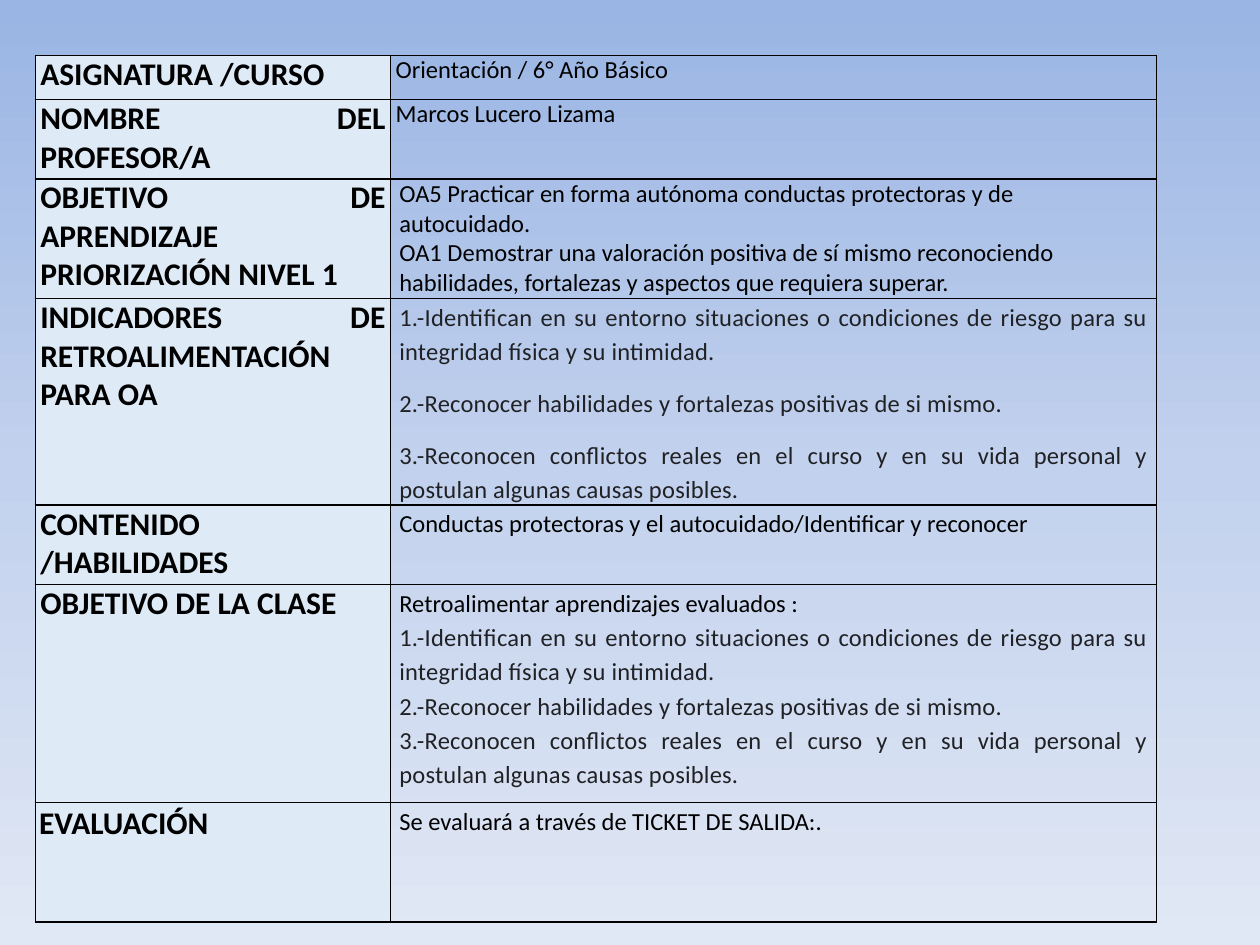
from copy import deepcopy

from pptx import Presentation
from pptx.dml.color import RGBColor
from pptx.enum.text import PP_ALIGN
from pptx.oxml import parse_xml
from pptx.oxml.ns import nsdecls, qn
from pptx.util import Inches, Pt

FONT = "Calibri"
BLACK = "000000"
GRAY = "202124"
LABEL_FILL = "DEEAF6"
BACKGROUND_STOPS = [(0, "9AB5E4"), (0.5, "C2D1ED"), (1, "E1E8F5")]
COLUMN_WIDTHS = [2.82, 6.08]

INDICATORS = [
    "1.-Identifican en su entorno situaciones o condiciones de riesgo para su integridad física y su intimidad.",
    "2.-Reconocer habilidades y fortalezas positivas de si mismo.",
    "3.-Reconocen conflictos reales en el curso y en su vida personal y postulan algunas causas posibles.",
]
SPACED = {"line_spacing": 1.15}
INDICATOR = {"line_spacing": 1.15, "color": GRAY, "tracking": 10}

# Height, label, side margin of the value, and the value's paragraphs with their format
ROWS = [
    (0.35, "ASIGNATURA /CURSO", 0.04, [("Orientación / 6° Año Básico", {})]),
    (0.63, "NOMBRE DEL PROFESOR/A", 0.04, [("Marcos Lucero Lizama", {})]),
    (0.95, "OBJETIVO DE APRENDIZAJE PRIORIZACIÓN NIVEL 1", 0.07, [
        ("OA5 Practicar en forma autónoma conductas protectoras y de autocuidado.",
         {"align": PP_ALIGN.LEFT}),
        ("OA1 Demostrar una valoración positiva de sí mismo reconociendo habilidades, "
         "fortalezas y aspectos que requiera superar.", {"align": PP_ALIGN.LEFT}),
    ]),
    (1.44, "INDICADORES DE RETROALIMENTACIÓN PARA OA", 0.07,
     [(text, {**INDICATOR, "space_after": 10}) for text in INDICATORS]),
    (0.63, "CONTENIDO /HABILIDADES", 0.07,
     [("Conductas protectoras y el autocuidado/Identificar y reconocer", SPACED)]),
    (1.73, "OBJETIVO DE LA CLASE", 0.07,
     [("Retroalimentar aprendizajes evaluados :", SPACED)]
     + [(text, INDICATOR) for text in INDICATORS]),
    (0.95, "EVALUACIÓN", 0.07, [("Se evaluará a través de TICKET DE SALIDA:.", SPACED)]),
]


def rgb(color):
    return RGBColor.from_string(color)


def write(paragraph, text, size=14, bold=False, color=BLACK, align=PP_ALIGN.JUSTIFY,
          line_spacing=None, space_after=0, tracking=0):
    """Tracking is in hundredths of a point."""
    paragraph.alignment = align
    paragraph.line_spacing = line_spacing
    paragraph.space_after = Pt(space_after)
    run = paragraph.add_run()
    run.text = text
    font = run.font
    font.name, font.size, font.bold = FONT, Pt(size), bold
    font.color.rgb = rgb(color)
    if tracking:
        run._r.get_or_add_rPr().set("spc", str(tracking))


def set_borders(cell, color=BLACK, width=1):
    properties = cell._tc.get_or_add_tcPr()
    for index, side in enumerate(["lnL", "lnR", "lnT", "lnB"]):
        properties.insert(index, parse_xml(
            f'<a:{side} {nsdecls("a")} w="{Pt(width)}"><a:solidFill>'
            f'<a:srgbClr val="{color}"/></a:solidFill></a:{side}>'))


def fill_cell(cell, paragraphs, side_margin, end_margin=0, fill=None):
    cell.margin_left = cell.margin_right = Inches(side_margin)
    cell.margin_top = cell.margin_bottom = Inches(end_margin)
    if fill:
        cell.fill.solid()
        cell.fill.fore_color.rgb = rgb(fill)
    else:
        cell.fill.background()
    set_borders(cell)
    frame = cell.text_frame
    for index, (text, style) in enumerate(paragraphs):
        paragraph = frame.add_paragraph() if index else frame.paragraphs[0]
        write(paragraph, text, **style)


def paint_background(slide):
    fill = slide.background.fill
    fill.gradient()
    fill.gradient_angle = 270
    stop_list = next(slide.element.iter(qn("a:gsLst")))
    stop_list.insert(1, deepcopy(stop_list[0]))
    for stop, (position, color) in zip(fill.gradient_stops, BACKGROUND_STOPS):
        stop.position = position
        stop.color.rgb = rgb(color)


def add_lesson_table(slide, left, top, width, height):
    table = slide.shapes.add_table(len(ROWS), len(COLUMN_WIDTHS), Inches(left),
                                   Inches(top), Inches(width), Inches(height)).table
    table.first_row = table.horz_banding = False
    for column, column_width in zip(table.columns, COLUMN_WIDTHS):
        column.width = Inches(column_width)
    for index, (row_height, label, margin, paragraphs) in enumerate(ROWS):
        table.rows[index].height = Inches(row_height)
        is_last = index == len(ROWS) - 1
        label_margins = (0.03, 0.02) if is_last else (0.04, 0)
        fill_cell(table.cell(index, 0), [(label, {"size": 18, "bold": True})],
                  *label_margins, fill=LABEL_FILL)
        fill_cell(table.cell(index, 1), paragraphs, margin)


def main():
    presentation = Presentation()
    presentation.slide_width, presentation.slide_height = Inches(10), Inches(7.5)
    slide = presentation.slides.add_slide(presentation.slide_layouts[6])
    paint_background(slide)
    add_lesson_table(slide, 0.28, 0.44, sum(COLUMN_WIDTHS), sum(row[0] for row in ROWS))
    presentation.save("out.pptx")


if __name__ == "__main__":
    main()
